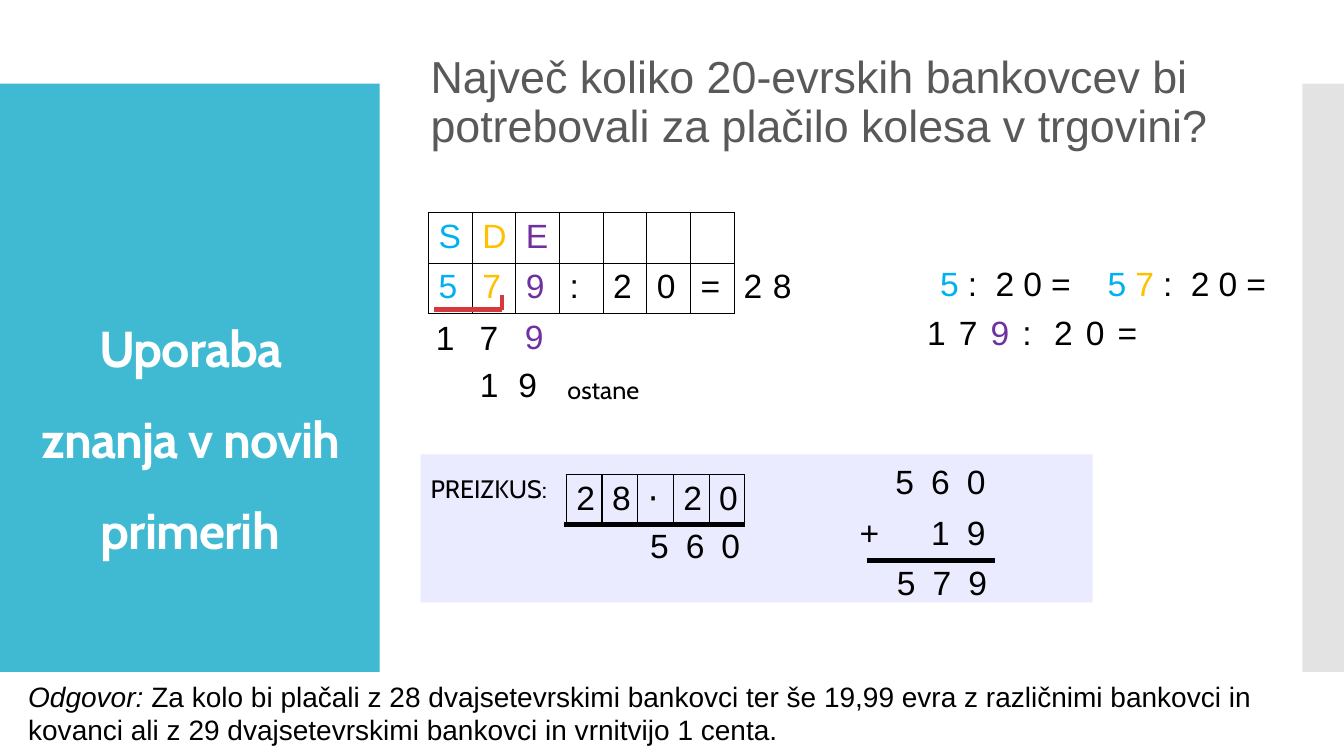
from dataclasses import dataclass

from lxml import etree
from pptx import Presentation
from pptx.dml.color import RGBColor
from pptx.enum import shapes, text
from pptx.oxml import ns
from pptx.util import Cm, Pt

COLORS = {
    "white": "FFFFFF", "black": "000000", "grey": "595959", "side": "C8C8C8",
    "teal": "40BAD2", "lilac": "EBEBFF", "red": "D5393D",
    "hundreds": "00B0F0", "tens": "FFC000", "units": "7030A0",
}
TINTS = {"h": "hundreds", "t": "tens", "u": "units", "k": "black"}
LEFT, CENTER = text.PP_ALIGN.LEFT, text.PP_ALIGN.CENTER
MIDDLE, TOP = text.MSO_ANCHOR.MIDDLE, text.MSO_ANCHOR.TOP


@dataclass
class Block:
    left: float
    top: float
    width: float
    height: float
    color: str
    alpha: int = 100


@dataclass
class Run:
    words: str
    size: float
    font: str = "Arial"
    color: str = "black"
    bold: bool = False
    italic: bool = False
    spacing: int = 0


@dataclass
class Label:
    left: float
    top: float
    width: float
    height: float
    runs: list[Run]
    align: text.PP_ALIGN = LEFT
    anchor: text.MSO_ANCHOR = TOP
    line_spacing: float = 1.0
    before: float = 0


@dataclass
class Grid:
    """One character per cell, "_" for an empty cell; tints pair with the first cells."""
    left: float
    top: float
    widths: tuple[float, ...]
    rows: tuple[str, ...]
    tints: str = ""
    align: text.PP_ALIGN = LEFT
    bordered: bool = False
    row_height: float = 1.27


@dataclass
class Line:
    x1: float
    y1: float
    x2: float
    y2: float
    color: str = "black"


def rgb(name: str) -> RGBColor:
    return RGBColor.from_string(COLORS[name])


def draw_block(s, block: Block) -> None:
    sp = s.shapes.add_shape(shapes.MSO_SHAPE.RECTANGLE, Cm(block.left), Cm(block.top),
                            Cm(block.width), Cm(block.height))
    sp.shadow.inherit = False
    sp.fill.solid()
    sp.fill.fore_color.rgb = rgb(block.color)
    sp.line.fill.background()
    if block.alpha < 100:
        color = sp._element.spPr.find(".//" + ns.qn("a:srgbClr"))
        etree.SubElement(color, ns.qn("a:alpha")).set("val", str(block.alpha * 1000))


def add_run(p, run: Run) -> None:
    r = p.add_run()
    r.text = run.words
    r.font.size, r.font.name = Pt(run.size), run.font
    r.font.bold, r.font.italic = run.bold, run.italic
    r.font.color.rgb = rgb(run.color)
    if run.spacing:
        r._r.get_or_add_rPr().set("spc", str(run.spacing))


def draw_label(s, label: Label) -> None:
    sp = s.shapes.add_textbox(Cm(label.left), Cm(label.top), Cm(label.width), Cm(label.height))
    tf = sp.text_frame
    tf.word_wrap = True
    tf.vertical_anchor = label.anchor
    p = tf.paragraphs[0]
    p.alignment, p.line_spacing, p.space_before = label.align, label.line_spacing, Pt(label.before)
    for run in label.runs:
        add_run(p, run)


def set_borders(cell, visible: bool) -> None:
    tc_pr = cell._tc.get_or_add_tcPr()
    for side in ("lnL", "lnR", "lnT", "lnB"):
        ln = etree.SubElement(tc_pr, ns.qn(f"a:{side}"), w=str(Pt(1)))
        if visible:
            fill = etree.SubElement(ln, ns.qn("a:solidFill"))
            etree.SubElement(fill, ns.qn("a:srgbClr"), val=COLORS["black"])
        else:
            etree.SubElement(ln, ns.qn("a:noFill"))


def draw_grid(s, grid: Grid) -> None:
    frame = s.shapes.add_table(len(grid.rows), len(grid.widths), Cm(grid.left), Cm(grid.top),
                               Cm(sum(grid.widths)), Cm(grid.row_height * len(grid.rows)))
    table = frame.table
    table.first_row = table.horz_banding = False
    for column, width in zip(table.columns, grid.widths):
        column.width = Cm(width)
    for i, row in enumerate(grid.rows):
        table.rows[i].height = Cm(grid.row_height)
        for j, (mark, tint) in enumerate(zip(row, grid.tints.ljust(len(row), "k"))):
            cell = table.cell(i, j)
            set_borders(cell, grid.bordered)
            cell.fill.background()
            p = cell.text_frame.paragraphs[0]
            p.alignment = grid.align
            if mark != "_":
                add_run(p, Run(mark, 24, color=TINTS[tint]))


def draw_line(s, line: Line) -> None:
    cn = s.shapes.add_connector(shapes.MSO_CONNECTOR.STRAIGHT, Cm(line.x1), Cm(line.y1),
                                Cm(line.x2), Cm(line.y2))
    cn.line.color.rgb = rgb(line.color)
    cn.line.width = Pt(3.5)
    etree.SubElement(cn._element.spPr, ns.qn("a:effectLst"))


BLOCKS = [
    Block(0, 2.11, 9.57, 14.82, "teal"),
    Block(32.82, 2.11, 1.05, 14.82, "side", alpha=50),
    Block(10.6, 11.45, 16.94, 3.73, "lilac"),
]

LABELS = [
    Label(0.71, 4.27, 8.18, 12.78,
          [Run("Uporaba znanja v novih primerih", 36, "Cabin", "white", bold=True, spacing=-60)],
          CENTER, MIDDLE, line_spacing=1.5),
    Label(10.6, 0.97, 21.29, 3.28,
          [Run("Največ koliko 20-evrskih bankovcev bi potrebovali za plačilo kolesa v trgovini?",
               32, color="grey")], LEFT, MIDDLE, line_spacing=0.9, before=12),
    Label(18.49, 6.55, 0.74, 1.27, [Run("2", 24)], CENTER),
    Label(19.23, 6.55, 0.74, 1.27, [Run("8", 24)], CENTER),
    Label(14.05, 9.3, 3.07, 1.02, [Run("ostane", 18, "Cabin")]),
    Label(10.6, 11.81, 3.66, 1.02, [Run("PREIZKUS:", 18, "Cabin")]),
    Label(0.46, 16.99, 32.77, 1.96,
          [Run("Odgovor: ", 20, italic=True),
           Run("Za kolo bi plačali z 28 dvajsetevrskimi bankovci ter še 19,99 evra z različnimi "
               "bankovci in kovanci ali z 29 dvajsetevrskimi bankovci in vrnitvijo 1 centa.", 20)]),
]

GRIDS = [
    # Long division and its remainders
    Grid(10.8, 5.36, (1.1,) * 7, ("SDE____", "579:20="), "htu", bordered=True, row_height=1.2),
    Grid(9.63, 7.95, (1.1,) * 4, ("_17_",)),
    Grid(12.75, 7.92, (1.42,), ("9",), "u", CENTER, row_height=1.73),
    Grid(10.87, 9.12, (0.97,) * 4, ("_19_",)),
    # Partial quotients
    Grid(23.44, 6.58, (0.7,) * 6, ("5:20=_",), "h", CENTER),
    Grid(27.66, 6.58, (0.7,) * 7, ("57:20=_",), "ht", CENTER),
    Grid(23.11, 7.82, (0.8,) * 8, ("179:20=_",), "kku"),
    # Check by multiplication and addition
    Grid(14.27, 11.96, (0.9,) * 5, ("28⋅20",), bordered=True),
    Grid(14.3, 13.18, (0.58, 1.22) + (0.9,) * 3, ("__560",), row_height=1.45),
    Grid(21.41, 11.58, (0.9,) * 4, ("_560", "+_19")),
    Grid(22.35, 14.12, (0.9,) * 3, ("579",)),
]

LINES = [
    Line(10.95, 7.8, 12.65, 7.8, "red"),
    Line(12.65, 7.8, 12.65, 7.44, "red"),
    Line(14.22, 13.21, 18.77, 13.21),
    Line(21.84, 14.12, 25.07, 14.12),
]


def main() -> None:
    prs = Presentation()
    prs.slide_width, prs.slide_height = Cm(33.87), Cm(19.05)
    s = prs.slides.add_slide(prs.slide_layouts[6])
    for items, draw in ((BLOCKS, draw_block), (LABELS, draw_label),
                        (GRIDS, draw_grid), (LINES, draw_line)):
        for item in items:
            draw(s, item)
    prs.save("out.pptx")


if __name__ == "__main__":
    main()
